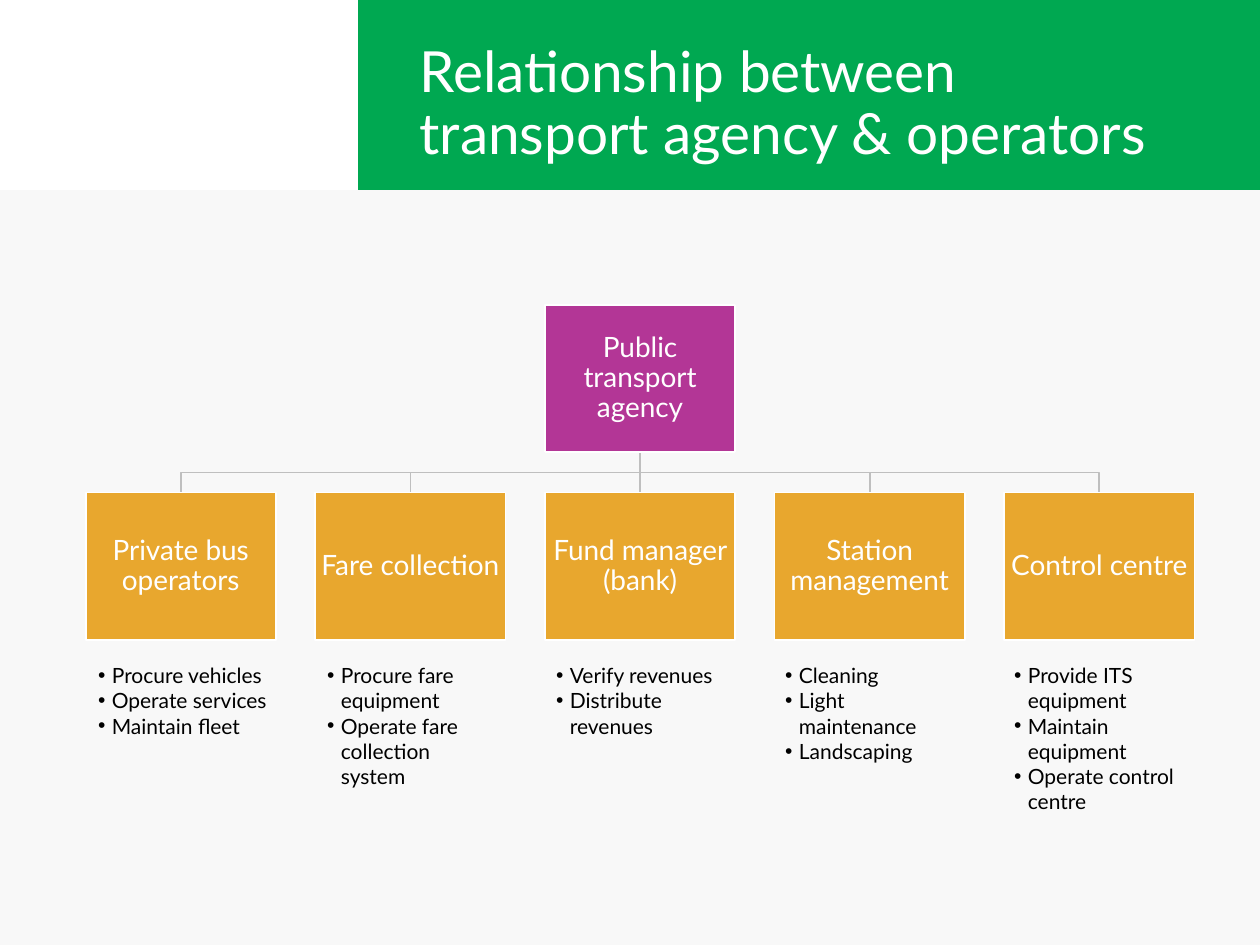
from lxml import etree
from pptx import Presentation
from pptx.dml.color import RGBColor
from pptx.enum import shapes, text
from pptx.oxml.ns import qn
from pptx.util import Inches, Pt

theme = {
    "font": "Lato", "title": 32.4, "box": 16, "list": 12,
    "green": "00A851", "pale": "F8F8F8", "white": "FFFFFF", "black": "000000",
    "pink": "B33696", "gold": "E8A72E", "grey": "BFBFBF",
}
units = [
    ("Private bus operators", 1.63, 0.71,
     ["Procure vehicles", "Operate services", "Maintain fleet"]),
    ("Fare collection", 1.53, 1.11,
     ["Procure fare equipment", "Operate fare collection system"]),
    ("Fund manager (bank)", 1.53, 0.71,
     ["Verify revenues", "Distribute revenues"]),
    ("Station management", 1.37, 0.91,
     ["Cleaning", "Light maintenance", "Landscaping"]),
    ("Control centre", 1.53, 1.31,
     ["Provide ITS equipment", "Maintain equipment", "Operate control centre"]),
]

# Grid: five columns, three rows
left, step, wide, high = 0.68, 7.29 / 4, 1.51, 1.17
top, row, lists, band = 2.42, 3.91, 5.21, 1.51
cols = [left + i * step for i in range(len(units))]
mid = cols[2]


def write(para, words, size, color, **form):
    para.text = words
    for key, value in form.items():
        setattr(para, key, value)
    font = para.font
    for key, value in {"name": theme["font"], "size": Pt(theme[size])}.items():
        setattr(font, key, value)
    font.color.rgb = RGBColor.from_string(theme[color])


def block(x, y, w, h, fill, words=None):
    box = slide.shapes.add_shape(shapes.MSO_SHAPE.RECTANGLE, *map(Inches, (x, y, w, h)))
    box.shadow.inherit = False
    box.fill.solid()
    box.fill.fore_color.rgb = RGBColor.from_string(theme[fill])
    if words is None:
        box.line.fill.background()
        return
    box.line.color.rgb = RGBColor.from_string(theme["white"])
    box.line.width = Pt(1)
    frame = box.text_frame
    for side in ("left", "top", "right", "bottom"):
        setattr(frame, f"margin_{side}", Inches(0.01))
    frame.vertical_anchor = text.MSO_ANCHOR.MIDDLE
    write(frame.paragraphs[0], words, "box", "white",
          alignment=text.PP_ALIGN.CENTER, line_spacing=0.9)


deck = Presentation()
deck.slide_width, deck.slide_height = Inches(10), Inches(7.5)
slide = deck.slides.add_slide(deck.slide_layouts[5])

# Background and bands
slide.background.fill.solid()
slide.background.fill.fore_color.rgb = RGBColor.from_string(theme["green"])
block(0, band, 10, 7.5 - band, "pale")
block(0, 0, 2.84, band, "white")

# Title
title = slide.shapes.title
spot = {"left": 3.23, "top": 0.4, "width": 6.38, "height": 0.87}
for key, value in spot.items():
    setattr(title, key, Inches(value))
form = {"word_wrap": True, "auto_size": text.MSO_AUTO_SIZE.NONE,
        "vertical_anchor": text.MSO_ANCHOR.MIDDLE}
for key, value in form.items():
    setattr(title.text_frame, key, value)
write(title.text_frame.paragraphs[0], "Relationship between transport agency & operators",
      "title", "white", alignment=text.PP_ALIGN.LEFT, line_spacing=0.9)

# Branches from the agency to each unit
stem, start = mid + wide / 2, top + high
fork = (start + row) / 2
for x in reversed(cols):
    end = x + wide / 2
    if x == mid:
        line = slide.shapes.add_connector(
            shapes.MSO_CONNECTOR.STRAIGHT, *map(Inches, (stem, start, end, row)))
        etree.SubElement(line._element.spPr, qn("a:effectLst"))
    else:
        pen = slide.shapes.build_freeform(Inches(stem), Inches(start))
        turns = [(stem, fork), (end, fork), (end, row)]
        pen.add_line_segments([(Inches(a), Inches(b)) for a, b in turns], close=False)
        line = pen.convert_to_shape()
        line.fill.background()
        line.shadow.inherit = False
    line.line.color.rgb = RGBColor.from_string(theme["grey"])
    line.line.width = Pt(1)

# Agency, units and their tasks
block(mid, top, wide, high, "pink", "Public transport agency")
for i, (name, width, height, tasks) in enumerate(units):
    block(cols[i], row, wide, high, "gold", name)
    note = slide.shapes.add_textbox(
        *map(Inches, (left + i * 7.27 / 4, lists, width, height)))
    frame = note.text_frame
    frame.word_wrap = True
    frame.auto_size = text.MSO_AUTO_SIZE.SHAPE_TO_FIT_TEXT
    for n, task in enumerate(tasks):
        para = frame.add_paragraph() if n else frame.paragraphs[0]
        props = para._p.get_or_add_pPr()
        props.set("marL", str(Inches(0.11)))
        props.set("indent", str(-Inches(0.11)))
        etree.SubElement(props, qn("a:buFont"), typeface="Arial")
        etree.SubElement(props, qn("a:buChar"), char="•")
        write(para, task, "list", "black")

deck.save("out.pptx")
